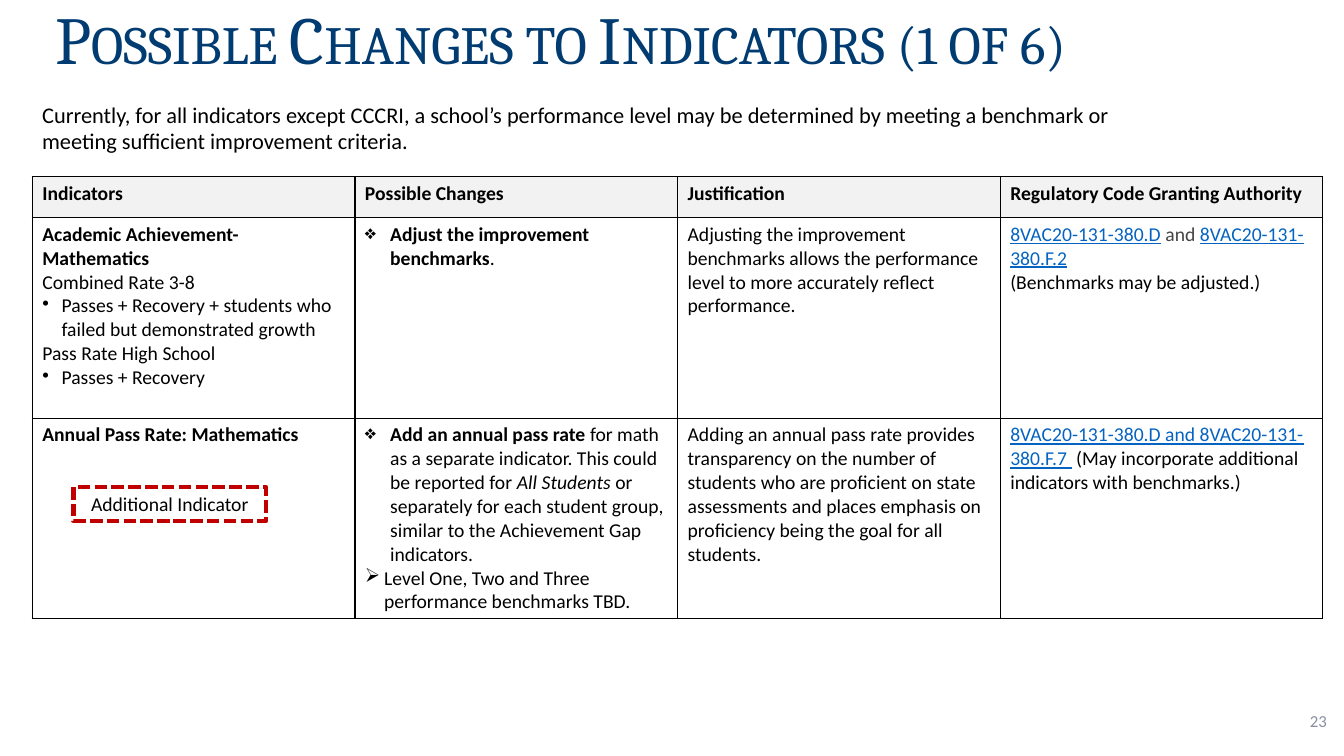
from dataclasses import dataclass
from lxml.etree import SubElement
from pptx import Presentation
from pptx.dml.color import RGBColor
from pptx.enum.dml import MSO_LINE
from pptx.enum.shapes import MSO_SHAPE
from pptx.enum.text import MSO_ANCHOR, PP_ALIGN
from pptx.oxml.ns import qn
from pptx.util import Inches, Pt


@dataclass(frozen=True)
class Theme:
    title_font: str = "Cambria"
    body_font: str = "Calibri"
    title_size: int = 48
    intro_size: int = 16
    body_size: int = 14
    number_size: int = 12
    navy: str = "003C71"
    black: str = "000000"
    white: str = "FFFFFF"
    header_fill: str = "F2F2F2"
    link: str = "0563C1"
    gray: str = "444444"
    number_gray: str = "888FA3"
    red: str = "C00000"


theme = Theme()


def style_paragraph(paragraph, size, color=theme.black, font=theme.body_font):
    paragraph.font.name = font
    paragraph.font.size = Pt(size)
    paragraph.font.color.rgb = RGBColor.from_string(color)


def add_text(left, top, width, height, text, anchor=MSO_ANCHOR.TOP):
    shape = slide.shapes.add_textbox(Inches(left), Inches(top), Inches(width), Inches(height))
    shape.text_frame.word_wrap = True
    shape.text_frame.vertical_anchor = anchor
    shape.text_frame.text = text
    return shape.text_frame


presentation = Presentation()
presentation.slide_width = Inches(13.33)
presentation.slide_height = Inches(7.5)
slide = presentation.slides.add_slide(presentation.slide_layouts[6])

title_frame = add_text(-0.35, -0.2, 13.33, 1.03, "Possible Changes to Indicators (1 of 6)", MSO_ANCHOR.BOTTOM)
title_frame.margin_left = Inches(0.9)
title = title_frame.paragraphs[0]
title.line_spacing = 0.9
style_paragraph(title, theme.title_size, theme.navy, theme.title_font)
title.runs[0].font._element.set("cap", "small")

page_number = add_text(10.26, 6.95, 3, 0.4, "23", MSO_ANCHOR.MIDDLE).paragraphs[0]
page_number.alignment = PP_ALIGN.RIGHT
style_paragraph(page_number, theme.number_size, theme.number_gray)

headers = ["Indicators", "Possible Changes", "Justification", "Regulatory Code Granting Authority"]
rows = [
    [[("", [(header, "bold")])] for header in headers],
    [
        [
            ("", [("Academic Achievement-Mathematics", "bold")]),
            ("", [("Combined Rate 3-8", "")]),
            ("•", [("Passes + Recovery + students who failed but demonstrated growth", "")]),
            ("", [("Pass Rate High School", "")]),
            ("•", [("Passes + Recovery", "")]),
        ],
        [("❖", [("Adjust the improvement benchmarks", "bold"), (".", "")])],
        [("", [("Adjusting the improvement benchmarks allows the performance level to more "
                "accurately reflect performance.", "")])],
        [
            ("", [("8VAC20-131-380.D", "link"), (" and ", "gray"), ("8VAC20-131-380.F.2", "link")]),
            ("", [("(Benchmarks may be adjusted.)", "")]),
        ],
    ],
    [
        [("", [("Annual Pass Rate: Mathematics", "bold")])],
        [
            ("❖", [
                ("Add an annual pass rate ", "bold"),
                ("for math as a separate indicator. This could be reported for ", ""),
                ("All Students", "italic"),
                (" or separately for each student group, similar to the Achievement Gap indicators.", ""),
            ]),
            ("➢", [("Level One, Two and Three performance benchmarks TBD.", "")]),
        ],
        [("", [("Adding an annual pass rate provides transparency on the number of students who are "
                "proficient on state assessments and places emphasis on proficiency being the goal "
                "for all students.", "")])],
        [("", [
            ("8VAC20-131-380.D and 8VAC20-131-380.F.7 ", "link"),
            (" ", "gray"),
            ("(May incorporate additional indicators with benchmarks.)", ""),
        ])],
    ],
]
row_heights = [0.41, 1.99, 1.99]
bullet_indents = {"•": 0.19, "❖": 0.25, "➢": 0.19}

table = slide.shapes.add_table(
    len(rows), len(headers), Inches(0.32), Inches(1.75), Inches(12.8), Inches(sum(row_heights))
).table
table.first_row = False
table.horz_banding = False
for column in table.columns:
    column.width = Inches(3.2)

for row_index, row in enumerate(rows):
    table.rows[row_index].height = Inches(row_heights[row_index])
    for column_index, paragraphs in enumerate(row):
        cell = table.cell(row_index, column_index)
        for paragraph_index, (bullet, runs) in enumerate(paragraphs):
            frame = cell.text_frame
            paragraph = frame.add_paragraph() if paragraph_index else frame.paragraphs[0]
            style_paragraph(paragraph, theme.body_size)
            if bullet:
                properties = paragraph._p.get_or_add_pPr()
                indent = Inches(bullet_indents[bullet])
                properties.set("marL", str(indent))
                properties.set("indent", str(-indent))
                bullet_element = properties.makeelement(qn("a:buChar"), {"char": bullet})
                properties.insert(0, bullet_element)
            for text, style in runs:
                run = paragraph.add_run()
                run.text = text
                if style == "bold":
                    run.font.bold = True
                elif style == "italic":
                    run.font.italic = True
                elif style == "link":
                    run.font.underline = True
                    run.font.color.rgb = RGBColor.from_string(theme.link)
                elif style == "gray":
                    run.font.color.rgb = RGBColor.from_string(theme.gray)
        cell_properties = cell._tc.get_or_add_tcPr()
        for side in ("a:lnL", "a:lnR", "a:lnT", "a:lnB"):
            border = SubElement(cell_properties, qn(side), w=str(Pt(1)))
            border_fill = SubElement(border, qn("a:solidFill"))
            SubElement(border_fill, qn("a:srgbClr"), val=theme.black)
        cell.fill.solid()
        cell.fill.fore_color.rgb = RGBColor.from_string(theme.white if row_index else theme.header_fill)

intro = add_text(
    0.32, 0.95, 11.19, 0.88,
    "Currently, for all indicators except CCCRI, a school’s performance level may be determined "
    "by meeting a benchmark or meeting sufficient improvement criteria.",
).paragraphs[0]
style_paragraph(intro, theme.intro_size)

indicator_box = slide.shapes.add_shape(
    MSO_SHAPE.RECTANGLE, Inches(0.73), Inches(4.83), Inches(1.91), Inches(0.34)
)
indicator_box.shadow.inherit = False
indicator_box.fill.background()
indicator_box.line.color.rgb = RGBColor.from_string(theme.red)
indicator_box.line.width = Pt(3)
indicator_box.line.dash_style = MSO_LINE.SQUARE_DOT
indicator_box.text_frame.text = "Additional Indicator"
indicator_label = indicator_box.text_frame.paragraphs[0]
indicator_label.alignment = PP_ALIGN.CENTER
style_paragraph(indicator_label, theme.body_size)

presentation.save("out.pptx")
